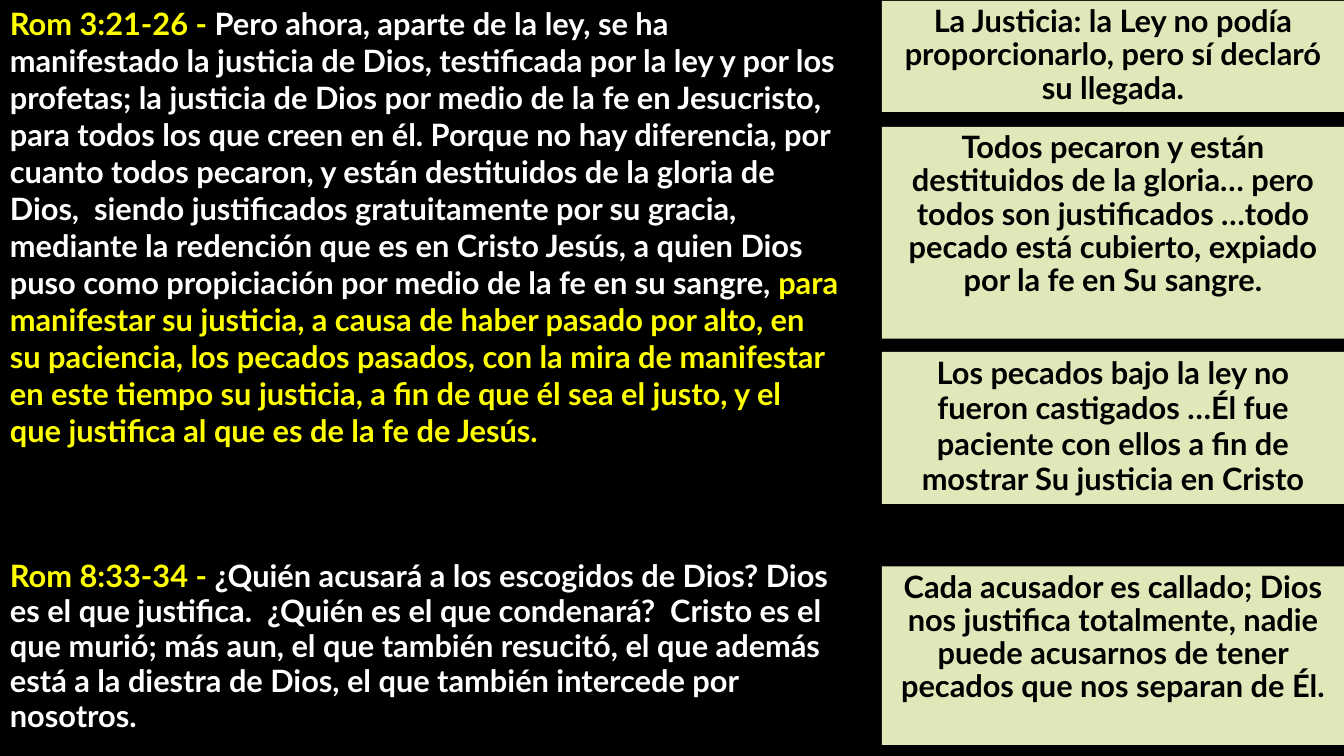
from pptx import Presentation
from pptx import util as u
from pptx.dml.color import RGBColor
from pptx.enum import shapes, text

COLORS = {"back": "000000", "note": "E0E8BA", "ink": "000000",
          "verse": "FFFFFF", "key": "FFFF00"}
COLS, ROWS = 160, 750          # grid cells across and down the slide
NOTE_COL, NOTE_COLS = 105, 55  # column of notes on the right
VERSE_COLS = 101               # column of verses on the left


class Deck:
    """Holds the style and the current slide."""
    font, size = "Lato", u.Pt(22)

    def __init__(self):
        self.prs = Presentation()
        self.prs.slide_width, self.prs.slide_height = u.Inches(13.33), u.Inches(7.5)
        self.s = self.prs.slides.add_slide(self.prs.slide_layouts[6])
        self.paint(self.s.background.fill, "back")

    def paint(self, fill, color):
        fill.solid()
        fill.fore_color.rgb = RGBColor.from_string(COLORS[color])

    def box(self, col, row, cols, rows):
        w, h = self.prs.slide_width, self.prs.slide_height
        return (round(w * col / COLS), round(h * row / ROWS),
                round(w * cols / COLS), round(h * rows / ROWS))

    def add_runs(self, sp, runs, align, spacing):
        tf = sp.text_frame
        tf.word_wrap = True
        tf.vertical_anchor = text.MSO_ANCHOR.TOP
        p = tf.paragraphs[0]
        p.alignment, p.line_spacing = align, spacing
        for words, color in runs:
            r = p.add_run()
            r.text = words
            r.font.name, r.font.size, r.font.bold = self.font, self.size, True
            r.font.color.rgb = RGBColor.from_string(COLORS[color])

    def note(self, row, rows, words, spacing=0.9):
        sp = self.s.shapes.add_shape(shapes.MSO_SHAPE.RECTANGLE,
                                     *self.box(NOTE_COL, row, NOTE_COLS, rows))
        sp.shadow.inherit = False
        self.paint(sp.fill, "note")
        sp.line.fill.background()
        self.add_runs(sp, [(words, "ink")], text.PP_ALIGN.CENTER, spacing)

    def verse(self, row, rows, runs, spacing=1.0):
        sp = self.s.shapes.add_textbox(*self.box(0, row, VERSE_COLS, rows))
        self.add_runs(sp, runs, text.PP_ALIGN.LEFT, spacing)


def main():
    deck = Deck()

    # Notes beside the verses
    deck.note(1, 110, "La Justicia: la Ley no podía proporcionarlo, pero sí "
                      "declaró su llegada.")
    deck.note(126, 210, "Todos pecaron y están destituidos de la gloria… pero todos "
                        "son justificados …todo pecado está cubierto, expiado por "
                        "la fe en Su sangre.")
    deck.note(349, 151, "Los pecados bajo la ley no fueron castigados …Él fue "
                        "paciente con ellos a fin de mostrar Su justicia en Cristo",
              spacing=0.95)
    deck.note(562, 177, "Cada acusador es callado; Dios nos justifica totalmente, "
                        "nadie puede acusarnos de tener pecados que nos separan de Él.")

    # Verses
    deck.verse(0, 528, [
        ("Rom 3:21-26 - ", "key"),
        ("Pero ahora, aparte de la ley, se ha manifestado la justicia de Dios, "
         "testificada por la ley y por los profetas; la justicia de Dios por medio "
         "de la fe en Jesucristo, para todos los que creen en él. Porque no hay "
         "diferencia, por cuanto todos pecaron, y están destituidos de la gloria de "
         "Dios,  siendo justificados gratuitamente por su gracia, mediante la "
         "redención que es en Cristo Jesús, a quien Dios puso como propiciación por "
         "medio de la fe en su sangre, ", "verse"),
        ("para manifestar su justicia, a causa de haber pasado por alto, en su "
         "paciencia, los pecados pasados, con la mira de manifestar en este tiempo "
         "su justicia, a fin de que él sea el justo, y el que justifica al que es "
         "de la fe de Jesús.", "key")])
    deck.verse(550, 186, [
        ("Rom 8:33-34 - ", "key"),
        ("¿Quién acusará a los escogidos de Dios? Dios es el que justifica.  ¿Quién "
         "es el que condenará?  Cristo es el que murió; más aun, el que también "
         "resucitó, el que además está a la diestra de Dios, el que también "
         "intercede por nosotros.", "verse")], spacing=0.95)

    deck.prs.save("out.pptx")


if __name__ == "__main__":
    main()
